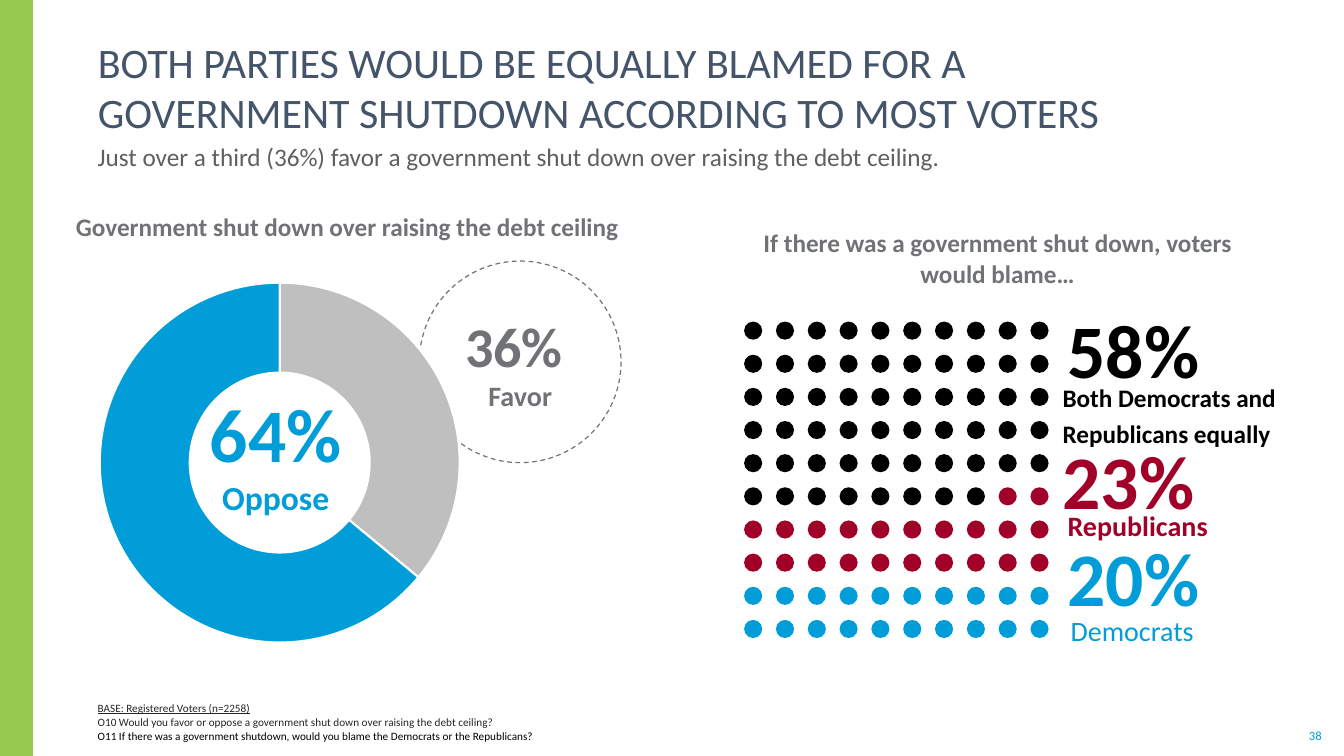
from dataclasses import dataclass
from typing import NamedTuple, Optional

from lxml.etree import SubElement
from pptx import Presentation
from pptx.chart.data import CategoryChartData
from pptx.dml.color import RGBColor
from pptx.enum.chart import XL_CHART_TYPE
from pptx.enum.dml import MSO_LINE
from pptx.enum.shapes import MSO_SHAPE
from pptx.enum.text import MSO_ANCHOR, MSO_AUTO_SIZE, PP_ALIGN
from pptx.oxml import parse_xml
from pptx.oxml.ns import nsdecls, qn
from pptx.util import Inches, Pt


@dataclass(frozen=True)
class Theme:
    font: str = "Calibri"
    accent: str = "96C94D"
    title: str = "44546A"
    subtitle: str = "5F5F5F"
    heading: str = "707276"
    note: str = "262626"
    black: str = "000000"
    white: str = "FFFFFF"
    red: str = "A10028"
    blue: str = "009DD9"
    favor: str = "BFBFBF"
    title_size: int = 30
    heading_size: int = 18
    figure_size: int = 54
    favor_size: int = 40
    oppose_label_size: int = 24
    label_size: int = 20
    chart_size: int = 10
    page_size: int = 9
    note_size: int = 8


T = Theme()


class Box(NamedTuple):
    left: float
    top: float
    width: float
    height: float

    def emu(self) -> tuple:
        return tuple(Inches(v) for v in self)


class Run(NamedTuple):
    text: str
    size: int
    color: str
    bold: bool = False
    underline: bool = False
    new_line: bool = False


@dataclass(frozen=True)
class Block:
    box: Box
    paragraphs: list
    align: PP_ALIGN = PP_ALIGN.LEFT
    anchor: MSO_ANCHOR = MSO_ANCHOR.TOP
    insets: tuple = (0.1, 0.05)
    wrap: bool = True
    line_spacing: Optional[float] = None
    space_before: float = 0


class DotShare(NamedTuple):
    count: int
    color: str


def rgb(color: str) -> RGBColor:
    return RGBColor.from_string(color)


def fill_text(sp, block: Block) -> None:
    tf = sp.text_frame
    tf.auto_size = MSO_AUTO_SIZE.NONE
    tf.word_wrap = block.wrap
    tf.vertical_anchor = block.anchor
    tf.margin_left = tf.margin_right = Inches(block.insets[0])
    tf.margin_top = tf.margin_bottom = Inches(block.insets[1])
    for i, runs in enumerate(block.paragraphs):
        p = tf.add_paragraph() if i else tf.paragraphs[0]
        p.alignment = block.align
        p.space_before = Pt(block.space_before if i else 0)
        if block.line_spacing:
            p.line_spacing = Pt(block.line_spacing)
        for run in runs:
            if run.new_line:
                p.add_line_break()
            r = p.add_run()
            r.text = run.text
            r.font.name = T.font
            r.font.size = Pt(run.size)
            r.font.bold = run.bold
            r.font.underline = run.underline
            r.font.color.rgb = rgb(run.color)


def add_text(s, block: Block) -> None:
    fill_text(s.shapes.add_textbox(*block.box.emu()), block)


def add_plain_shape(s, kind: MSO_SHAPE, box: Box, color: Optional[str] = None):
    sp = s.shapes.add_shape(kind, *box.emu())
    sp.shadow.inherit = False
    sp.line.fill.background()
    if color:
        sp.fill.solid()
        sp.fill.fore_color.rgb = rgb(color)
    else:
        sp.fill.background()
    return sp


def add_dot_grid(s, shares: list) -> None:
    """Draw one dot per percent, ten to a row."""
    colors = [share.color for share in shares for _ in range(share.count)]
    for i, color in enumerate(colors):
        row, column = divmod(i, 10)
        box = Box(7.38 + column * 2.84 / 9, 3.19 + row * 2.96 / 9, 0.18, 0.18)
        add_plain_shape(s, MSO_SHAPE.OVAL, box, color)


def add_doughnut(s, box: Box) -> None:
    data = CategoryChartData()
    data.categories = ["1", "2"]
    data.add_series("Series 1", (36, 64))
    chart = s.shapes.add_chart(XL_CHART_TYPE.DOUGHNUT, *box.emu(), data).chart
    chart.has_legend = False
    chart.has_title = False
    chart.font.name = T.font
    chart.font.size = Pt(T.chart_size)
    chart.font.color.rgb = rgb(T.subtitle)
    plot = chart.plots[0]
    plot.vary_by_categories = False
    for i, color in enumerate((T.favor, T.blue)):
        point = plot.series[0].points[i].format
        point.fill.solid()
        point.fill.fore_color.rgb = rgb(color)
        point.line.color.rgb = rgb(T.white)
        point.line.width = Pt(1.5)

    root = chart.element
    root.find(".//" + qn("c:holeSize")).set("val", "75")
    root.find(qn("c:chart")).addnext(parse_xml(
        f'<c:spPr {nsdecls("c", "a")}><a:noFill/><a:ln><a:noFill/></a:ln></c:spPr>'))
    plot_area = root.find(".//" + qn("c:plotArea"))
    layout = plot_area.find(qn("c:layout"))
    if layout is None:
        layout = plot_area.makeelement(qn("c:layout"))
        plot_area.insert(0, layout)
    manual = SubElement(layout, qn("c:manualLayout"))
    ring = 3.57
    width, height = ring / box.width, ring / box.height
    for tag, value in (("layoutTarget", "inner"), ("xMode", "edge"), ("yMode", "edge"),
                       ("x", (1 - width) / 2), ("y", (1 - height) / 2),
                       ("w", width), ("h", height)):
        SubElement(manual, qn(f"c:{tag}")).set("val", str(value))


def heading(text: str, box: Box) -> Block:
    return Block(box, [[Run(text, T.heading_size, T.heading, True)]], PP_ALIGN.CENTER)


def figure(text: str, box: Box, color: str) -> Block:
    return Block(box, [[Run(text, T.figure_size, color, True)]])


def centred(box: Box, value: Run, label: Run) -> Block:
    return Block(box, [[value, label]], PP_ALIGN.CENTER, MSO_ANCHOR.MIDDLE)


TITLE = Block(Box(0.87, 0.74, 11.3, 0.62), [[Run(
    "BOTH PARTIES WOULD BE EQUALLY BLAMED FOR A GOVERNMENT SHUTDOWN ACCORDING TO MOST VOTERS",
    T.title_size, T.title)]], anchor=MSO_ANCHOR.BOTTOM, insets=(0.1, 0))
TEXTS = [
    Block(Box(12.97, 7.22, 0.15, 0.15), [[Run("38", T.page_size, T.blue)]],
          PP_ALIGN.CENTER, MSO_ANCHOR.MIDDLE, (0, 0), wrap=False),
    Block(Box(0.87, 1.4, 11.9, 0.34), [[Run(
        "Just over a third (36%) favor a government shut down over raising the debt ceiling.",
        T.heading_size, T.subtitle)]], insets=(0.1, 0)),
    Block(Box(0.87, 6.97, 11.91, 0.4), [
        [Run("BASE: Registered Voters (n=2258)", T.note_size, T.note, underline=True)],
        [Run("O10 Would you favor or oppose a government shut down over raising the debt ceiling?",
             T.note_size, T.note)],
        [Run("O11 If there was a government shutdown, would you blame the Democrats or the Republicans?",
             T.note_size, T.black)],
    ], anchor=MSO_ANCHOR.BOTTOM, insets=(0.1, 0), space_before=0.6),
    figure("58%", Box(10.49, 2.96, 1.92, 1.01), T.black),
    Block(Box(10.44, 3.68, 2.59, 0.83), [[Run(
        "Both Democrats and Republicans equally", T.heading_size, T.black, True)]], line_spacing=26),
    figure("23%", Box(10.44, 4.26, 1.92, 1.31), T.red),
    Block(Box(10.49, 5, 1.61, 0.44), [[Run("Republicans", T.label_size, T.red, True)]], wrap=False),
    figure("20%", Box(10.49, 5.22, 1.92, 1.31), T.blue),
    Block(Box(10.52, 6.04, 1.44, 0.44), [[Run("Democrats", T.label_size, T.blue)]], wrap=False),
    heading("If there was a government shut down, voters would blame…", Box(7.38, 2.21, 5.03, 0.71)),
    heading("Government shut down over raising the debt ceiling", Box(0.58, 2.05, 5.73, 0.4)),
]
FAVOR = centred(Box(4.16, 2.59, 2, 2), Run("36% ", T.favor_size, T.heading, True),
                Run("Favor", T.label_size, T.heading, True, new_line=True))
OPPOSE = centred(Box(1.05, 2.71, 3.37, 3.55), Run("64%", T.figure_size, T.blue, True),
                 Run("Oppose", T.oppose_label_size, T.blue, True, new_line=True))
BLAME = [DotShare(58, T.black), DotShare(22, T.red), DotShare(20, T.blue)]


def main() -> None:
    prs = Presentation()
    prs.slide_width, prs.slide_height = Inches(13.33), Inches(7.5)
    s = prs.slides.add_slide(prs.slide_layouts[5])
    title = s.shapes.title
    title.left, title.top, title.width, title.height = TITLE.box.emu()
    fill_text(title, TITLE)
    add_plain_shape(s, MSO_SHAPE.RECTANGLE, Box(0, 0, 0.33, 7.5), T.accent)
    add_dot_grid(s, BLAME)
    for block in TEXTS:
        add_text(s, block)
    favor = add_plain_shape(s, MSO_SHAPE.OVAL, FAVOR.box)
    favor.line.color.rgb = rgb(T.heading)
    favor.line.width = Pt(0.85)
    favor.line.dash_style = MSO_LINE.DASH
    fill_text(favor, FAVOR)
    add_doughnut(s, Box(0.01, 2.66, 5.53, 3.86))
    fill_text(add_plain_shape(s, MSO_SHAPE.OVAL, OPPOSE.box), OPPOSE)
    prs.save("out.pptx")


if __name__ == "__main__":
    main()
